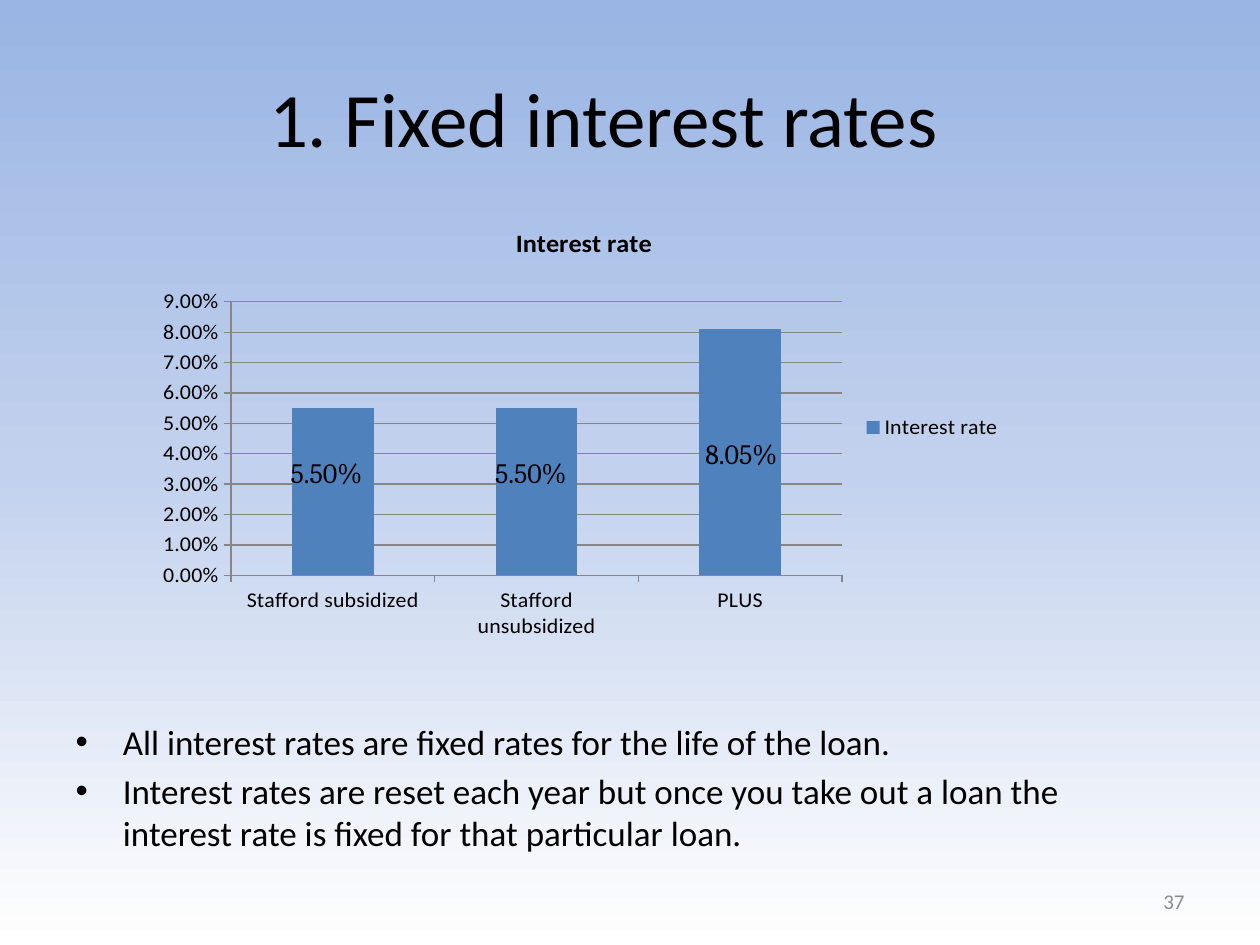
from copy import deepcopy
from dataclasses import dataclass

from pptx import Presentation
from pptx.chart.data import CategoryChartData as Data
from pptx.dml.color import RGBColor as RGB
from pptx.enum.chart import XL_CHART_TYPE as Kind, XL_LEGEND_POSITION as Side, XL_TICK_MARK as Tick
from pptx.enum.text import MSO_ANCHOR as Anchor, MSO_AUTO_SIZE as Fit, PP_ALIGN as Align
from pptx.oxml import parse_xml
from pptx.oxml.ns import nsdecls
from pptx.util import Pt


@dataclass(frozen=True)
class Theme:
    ink: RGB = RGB(0, 0, 0)
    dim: RGB = RGB(0x8C, 0x8C, 0x8C)
    grid: RGB = RGB(0x86, 0x86, 0x86)
    bar: RGB = RGB(0x4F, 0x81, 0xBD)
    sky: tuple = (RGB(0x9A, 0xB5, 0xE4), RGB(0xC2, 0xD1, 0xED), RGB(255, 255, 255))
    sans: str = "Calibri"
    serif: str = "Cambria"
    head: float = 44
    body: float = 20
    rate: float = 16
    cap: float = 15
    axis: float = 12.5
    page: float = 12


def put(item, **vals):
    for key, val in vals.items():
        setattr(item, key, val)


def place(shape, box):
    put(shape, **dict(zip(("left", "top", "width", "height"), map(Pt, box))))


def pin(node, spot, **modes):
    """Fix a chart part at x, y (and w, h), as fractions of the chart."""
    for old in node.findall("{*}layout"):
        node.remove(old)
    vals = {**modes, "xMode": "edge", "yMode": "edge", **dict(zip("xywh", spot))}
    inner = "".join(f'<c:{tag} val="{val}"/>' for tag, val in vals.items())
    lay = parse_xml(f"<c:layout {nsdecls('c')}><c:manualLayout>{inner}</c:manualLayout></c:layout>")
    side = node.find("{*}legendPos")
    if side is None:
        node.insert(0, lay)
    else:
        side.addnext(lay)


class Deck:
    def __init__(self, theme):
        self.look = theme
        self.file = Presentation()
        put(self.file, slide_width=Pt(720), slide_height=Pt(540))
        self.slide = self.file.slides.add_slide(self.file.slide_layouts[1])

    def style(self, font, size, color=None, name=None, **more):
        put(font, size=Pt(size), name=name or self.look.sans, **more)
        font.color.rgb = color or self.look.ink

    def back(self):
        fill = self.slide.background.fill
        fill.gradient()
        fill.gradient_angle = 270
        first = fill.gradient_stops[0]._gs
        first.addnext(deepcopy(first))
        for n, (stop, color) in enumerate(zip(fill.gradient_stops, self.look.sky)):
            stop.position = n / 2
            stop.color.rgb = color

    def title(self, text, box):
        shape = self.slide.shapes.title
        place(shape, box)
        shape.text_frame.text = text
        shape.text_frame.vertical_anchor = Anchor.MIDDLE
        para = shape.text_frame.paragraphs[0]
        para.alignment = Align.CENTER
        self.style(para.font, self.look.head)

    def list(self, lines, box):
        shape = self.slide.placeholders[1]
        place(shape, box)
        frame = shape.text_frame
        frame.text = "\n".join(lines)
        frame.auto_size = Fit.NONE
        for n, para in enumerate(frame.paragraphs):
            para.space_before = Pt(4 if n else 0)
            self.style(para.font, self.look.body)

    def label(self, text, box, size, color, name, align=Align.LEFT, anchor=Anchor.TOP):
        frame = self.slide.shapes.add_textbox(*map(Pt, box)).text_frame
        put(frame, word_wrap=True, vertical_anchor=anchor, text=text)
        para = frame.paragraphs[0]
        para.alignment = align
        self.style(para.font, size, color, name)

    def chart(self, name, rates, box, plot, key):
        """Draw the bars; plot and key place the plot area and the legend."""
        data = Data(number_format="0.00%")
        data.categories = list(rates)
        data.add_series(name, list(rates.values()))
        chart = self.slide.shapes.add_chart(Kind.COLUMN_STACKED, *map(Pt, box), data).chart
        self.style(chart.font, self.look.axis)
        put(chart, has_title=True, has_legend=True)
        chart.chart_title.text_frame.text = name
        para = chart.chart_title.text_frame.paragraphs[0]
        self.style(para.font, self.look.cap, bold=True)
        put(chart.legend, position=Side.RIGHT, include_in_layout=False)

        bars = chart.plots[0]
        put(bars, gap_width=150, overlap=100, vary_by_categories=False)
        fill = bars.series[0].format.fill
        fill.solid()
        fill.fore_color.rgb = self.look.bar

        axis = chart.value_axis
        put(axis, minimum_scale=0, maximum_scale=0.09, major_unit=0.01, has_major_gridlines=True)
        put(axis.tick_labels, number_format="0.00%", number_format_is_linked=False)
        for part in (axis, chart.category_axis):
            put(part, major_tick_mark=Tick.OUTSIDE, minor_tick_mark=Tick.NONE)
        for part in (axis, chart.category_axis, axis.major_gridlines):
            part.format.line.color.rgb = self.look.grid
            part.format.line.width = Pt(0.75)

        pin(chart._chartSpace.chart.plotArea, plot, layoutTarget="inner")
        pin(chart.legend._element, key)


def main():
    look = Theme()
    deck = Deck(look)
    deck.back()
    deck.title("1. Fixed interest rates", (36, 21.6, 617.8, 90))
    deck.list([
        "All interest rates are fixed rates for the life of the loan.",
        "Interest rates are reset each year but once you take out a loan the "
        "interest rate is fixed for that particular loan.",
    ], (36, 408.2, 642.2, 74.2))
    rates = {"Stafford subsidized": 0.055, "Stafford unsubsidized": 0.055, "PLUS": 0.081}
    deck.chart("Interest rate", rates, (87.8, 118, 491.8, 247.7),
               (0.09, 0.23, 0.71, 0.66), (0.82, 0.49))
    deck.label("37", (516, 500.5, 168, 28.8), look.page, look.dim, look.sans,
               Align.RIGHT, Anchor.MIDDLE)
    marks = [("5.50%", 159, 256.5), ("5.50%", 275.8, 256.5), ("8.05%", 396, 246.2)]
    for text, left, top in marks:
        deck.label(text, (left, top, 60, 26.6), look.rate, look.ink, look.serif)
    deck.file.save("out.pptx")


if __name__ == "__main__":
    main()
